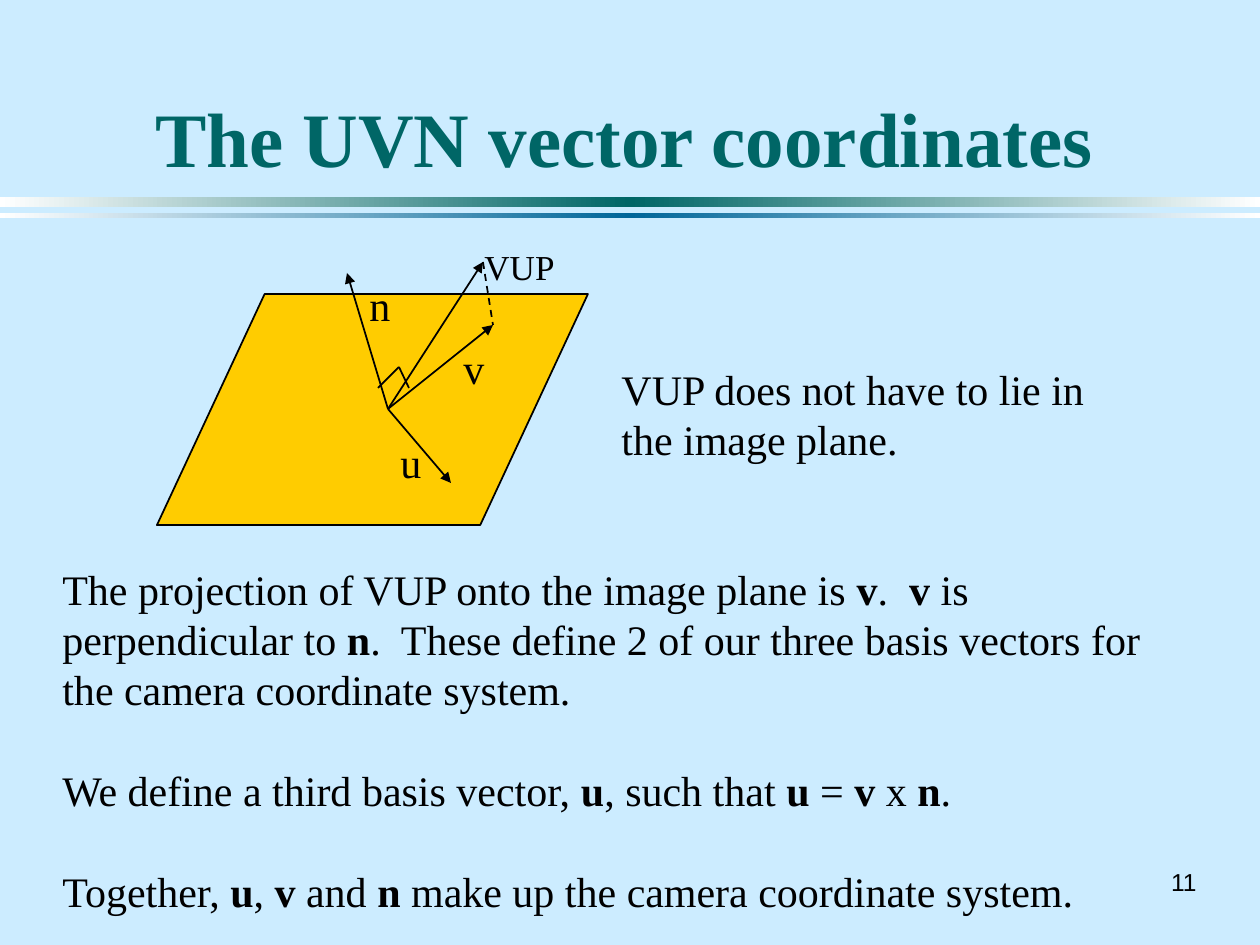
from copy import deepcopy
from pptx import Presentation
from pptx.dml.color import RGBColor
from pptx.enum.dml import MSO_LINE
from pptx.enum.shapes import MSO_CONNECTOR, MSO_SHAPE
from pptx.enum.text import MSO_ANCHOR, PP_ALIGN
from pptx.oxml.ns import qn
from pptx.oxml.xmlchemy import OxmlElement
from pptx.util import Pt

STRAIGHT = MSO_CONNECTOR.STRAIGHT
RECT, PARALLELOGRAM = MSO_SHAPE.RECTANGLE, MSO_SHAPE.PARALLELOGRAM
DASH = MSO_LINE.DASH
TOP, MIDDLE, BOTTOM = MSO_ANCHOR.TOP, MSO_ANCHOR.MIDDLE, MSO_ANCHOR.BOTTOM
LEFT, CENTER, RIGHT = PP_ALIGN.LEFT, PP_ALIGN.CENTER, PP_ALIGN.RIGHT
BLACK = RGBColor(0x00, 0x00, 0x00)
WHITE = RGBColor(0xFF, 0xFF, 0xFF)
SKY = RGBColor(0xCC, 0xEC, 0xFF)
TEAL = RGBColor(0x00, 0x66, 0x66)
BLUE = RGBColor(0x00, 0x66, 0x99)
GOLD = RGBColor(0xFF, 0xCC, 0x00)
SERIF, SANS = "Times New Roman", "Arial"
SCALE = 914400 / 126


def px(*values):
    return [round(v * SCALE) for v in values]


def add_text(box, paragraphs, size=24, font=SERIF, color=BLACK,
             align=LEFT, anchor=TOP, wrap=True):
    tf = s.shapes.add_textbox(*px(*box)).text_frame
    tf.word_wrap = wrap
    tf.vertical_anchor = anchor
    for i, runs in enumerate(paragraphs):
        p = tf.add_paragraph() if i else tf.paragraphs[0]
        p.alignment = align
        p.line_spacing = Pt(size * 1.2)
        p.space_before = Pt(size * 1.2 if i else 0)
        for text, bold in runs:
            r = p.add_run()
            r.text = text
            r.font.name = font
            r.font.size = Pt(size)
            r.font.bold = bold
            r.font.color.rgb = color


prs = Presentation()
prs.slide_width, prs.slide_height = px(1260, 945)
s = prs.slides.add_slide(prs.slide_layouts[6])
s.background.fill.solid()
s.background.fill.fore_color.rgb = SKY

for top, height, color in [(197, 10, TEAL), (213, 5, BLUE)]:
    bar = s.shapes.add_shape(RECT, *px(0, top, 1260, height))
    bar.shadow.inherit = False
    bar.line.fill.background()
    bar.fill.gradient()
    bar.fill.gradient_angle = 0
    stops = bar._element.spPr.find(".//" + qn("a:gsLst"))
    stops.append(deepcopy(stops[0]))
    for stop, position, shade in zip(bar.fill.gradient_stops, (0, 0.5, 1), (WHITE, color, WHITE)):
        stop.position = position
        stop.color.rgb = shade

add_text((1155, 861, 54, 42), [[("11", False)]], 14, SANS,
         align=RIGHT, anchor=MIDDLE, wrap=False)
add_text((84, 32, 1081, 157), [[("The UVN vector coordinates", True)]], 44,
         color=TEAL, align=CENTER, anchor=BOTTOM)

plane = s.shapes.add_shape(PARALLELOGRAM, *px(157, 294, 431, 231))
plane.shadow.inherit = False
plane.adjustments[0] = 0.466
plane.fill.solid()
plane.fill.fore_color.rgb = GOLD
plane.line.color.rgb = BLACK
plane.line.width = Pt(1)

origin, vup, v, n, u = (388, 409), (483, 262), (493, 325), (347, 273), (451, 483)
corner = (399, 367)
lines = [(origin, tip, True, None) for tip in (vup, v, n, u)]
lines += [((378, 388), corner, False, None), (corner, (409, 388), False, None),
          (vup, v, False, DASH)]
for start, end, arrow, dash in lines:
    c = s.shapes.add_connector(STRAIGHT, *px(*start, *end))
    c.line.color.rgb = BLACK
    c.line.width = Pt(1)
    if dash:
        c.line.dash_style = dash
    if arrow:
        head = OxmlElement("a:tailEnd")
        head.set("type", "triangle")
        c.line._get_or_add_ln().append(head)
    c._element.spPr.append(OxmlElement("a:effectLst"))

for text, x, y, w, h, size in [("n", 357, 273, 46, 63, 24), ("VUP", 472, 239, 96, 54, 20),
                               ("v", 451, 336, 46, 63, 24), ("u", 388, 430, 46, 63, 24)]:
    add_text((x, y, w, h), [[(text, False)]], size, wrap=False)

add_text((609, 357, 548, 113), [[("VUP does not have to lie in the image plane.", False)]])
add_text((50, 557, 1147, 365), [
    [("The projection of VUP onto the image plane is ", False), ("v", True), (".  ", False),
     ("v", True), (" is perpendicular to ", False), ("n", True),
     (".  These define 2 of our three basis vectors for the camera coordinate system.", False)],
    [("We define a third basis vector, ", False), ("u", True), (", such that ", False),
     ("u", True), (" = ", False), ("v", True), (" x ", False), ("n", True), (".", False)],
    [("Together, ", False), ("u", True), (", ", False), ("v", True), (" and ", False),
     ("n", True), (" make up the camera coordinate system.", False)],
])

prs.save("out.pptx")
